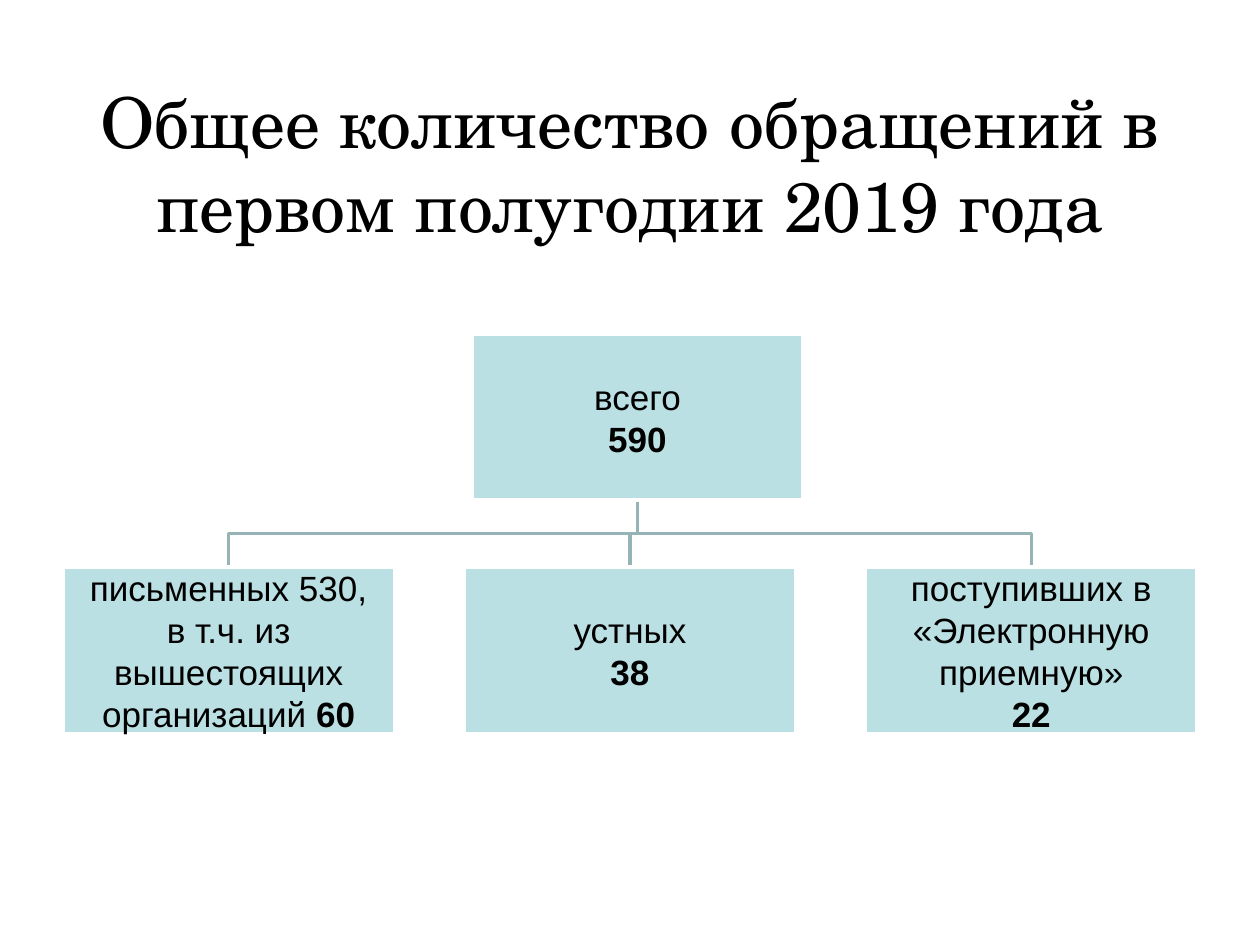
from dataclasses import dataclass

from pptx import Presentation
from pptx.dml.color import RGBColor
from pptx.enum.shapes import MSO_SHAPE
from pptx.enum.text import MSO_ANCHOR, MSO_AUTO_SIZE, PP_ALIGN
from pptx.util import Inches, Pt


@dataclass(frozen=True)
class Theme:
    title_font: str = "TeX Gyre Schola"
    body_font: str = "Arial"
    title_size: int = 40
    body_size: int = 20
    line_width: int = 2
    ink: RGBColor = RGBColor(0x00, 0x00, 0x00)
    paper: RGBColor = RGBColor(0xFF, 0xFF, 0xFF)
    card: RGBColor = RGBColor(0xBB, 0xE0, 0xE3)
    branch: RGBColor = RGBColor(0x96, 0xB3, 0xB6)


@dataclass(frozen=True)
class Box:
    left: float
    top: float
    width: float
    height: float

    @property
    def center(self):
        return self.left + self.width / 2

    @property
    def bottom(self):
        return self.top + self.height

    def emu(self):
        return [Inches(v) for v in (self.left, self.top, self.width, self.height)]


THEME = Theme()
SLIDE_WIDTH, SLIDE_HEIGHT = 10, 7.5
MARGIN = SLIDE_WIDTH / 20
CONTENT_WIDTH = SLIDE_WIDTH - 2 * MARGIN
CARD_WIDTH, CARD_HEIGHT = 2.63, 1.32
ROOT_SHIFT = 0.06  # the total stands slightly right of the middle column

TITLE = "Общее количество обращений в первом полугодии 2019 года"
# Each card is a list of paragraphs; each paragraph is a list of (text, bold).
TOTAL = [[("всего", False)], [("590", True)]]
CHANNELS = [
    [
        [("письменных 530,", False)],
        [("в т.ч. из вышестоящих", False)],
        [("организаций ", False), ("60", True)],
    ],
    [[("устных", False)], [("38", True)]],
    [
        [("поступивших в", False)],
        [("«Электронную приемную»", False)],
        [("22", True)],
    ],
]


def apply_format(target, values):
    for attribute, value in values.items():
        setattr(target, attribute, value)


def format_frame(frame, inset):
    sides = ("margin_left", "margin_top", "margin_right", "margin_bottom")
    apply_format(frame, {
        "word_wrap": True,
        "auto_size": MSO_AUTO_SIZE.NONE,
        "vertical_anchor": MSO_ANCHOR.MIDDLE,
        **dict.fromkeys(sides, Inches(inset)),
    })


def write_paragraph(paragraph, runs, font_name, size):
    paragraph.alignment = PP_ALIGN.CENTER
    for text, bold in runs:
        run = paragraph.add_run()
        run.text = text
        apply_format(run.font, {"name": font_name, "size": Pt(size), "bold": bold})
        run.font.color.rgb = THEME.ink


def set_line(shape, color):
    shape.line.color.rgb = color
    shape.line.width = Pt(THEME.line_width)
    shape.shadow.inherit = False


def place_title(slide, box):
    title = slide.shapes.title
    apply_format(title, dict(zip(("left", "top", "width", "height"), box.emu())))
    format_frame(title.text_frame, 0.1)
    write_paragraph(title.text_frame.paragraphs[0], [(TITLE, False)],
                    THEME.title_font, THEME.title_size)


def draw_card(slide, box, paragraphs):
    card = slide.shapes.add_shape(MSO_SHAPE.RECTANGLE, *box.emu())
    card.fill.solid()
    card.fill.fore_color.rgb = THEME.card
    set_line(card, THEME.paper)
    frame = card.text_frame
    format_frame(frame, 0.01)
    for index, runs in enumerate(paragraphs):
        paragraph = frame.add_paragraph() if index else frame.paragraphs[0]
        write_paragraph(paragraph, runs, THEME.body_font, THEME.body_size)


def draw_branch(slide, parent, child):
    """Elbow line from the foot of the parent card to the head of the child."""
    bend = (parent.bottom + child.top) / 2
    builder = slide.shapes.build_freeform(
        Inches(parent.center), Inches(parent.bottom))
    corners = [(parent.center, bend), (child.center, bend), (child.center, child.top)]
    builder.add_line_segments(
        [(Inches(x), Inches(y)) for x, y in corners], close=False)
    branch = builder.convert_to_shape()
    branch.fill.background()
    set_line(branch, THEME.branch)


def draw_tree(slide, box):
    root = Box(box.center - CARD_WIDTH / 2 + ROOT_SHIFT, box.top,
               CARD_WIDTH, CARD_HEIGHT)
    step = (box.width - CARD_WIDTH) / (len(CHANNELS) - 1)
    children = [
        Box(box.left + column * step, box.bottom - CARD_HEIGHT,
            CARD_WIDTH, CARD_HEIGHT)
        for column in range(len(CHANNELS))
    ]
    for child in reversed(children):
        draw_branch(slide, root, child)
    for card, paragraphs in zip([root, *children], [TOTAL, *CHANNELS]):
        draw_card(slide, card, paragraphs)


def main():
    deck = Presentation()
    deck.slide_width, deck.slide_height = Inches(SLIDE_WIDTH), Inches(SLIDE_HEIGHT)
    slide = deck.slides.add_slide(deck.slide_layouts[5])
    place_title(slide, Box(MARGIN, 0.3, CONTENT_WIDTH, 1.98))
    draw_tree(slide, Box(MARGIN, 2.65, CONTENT_WIDTH, 3.17))
    deck.save("out.pptx")


if __name__ == "__main__":
    main()
